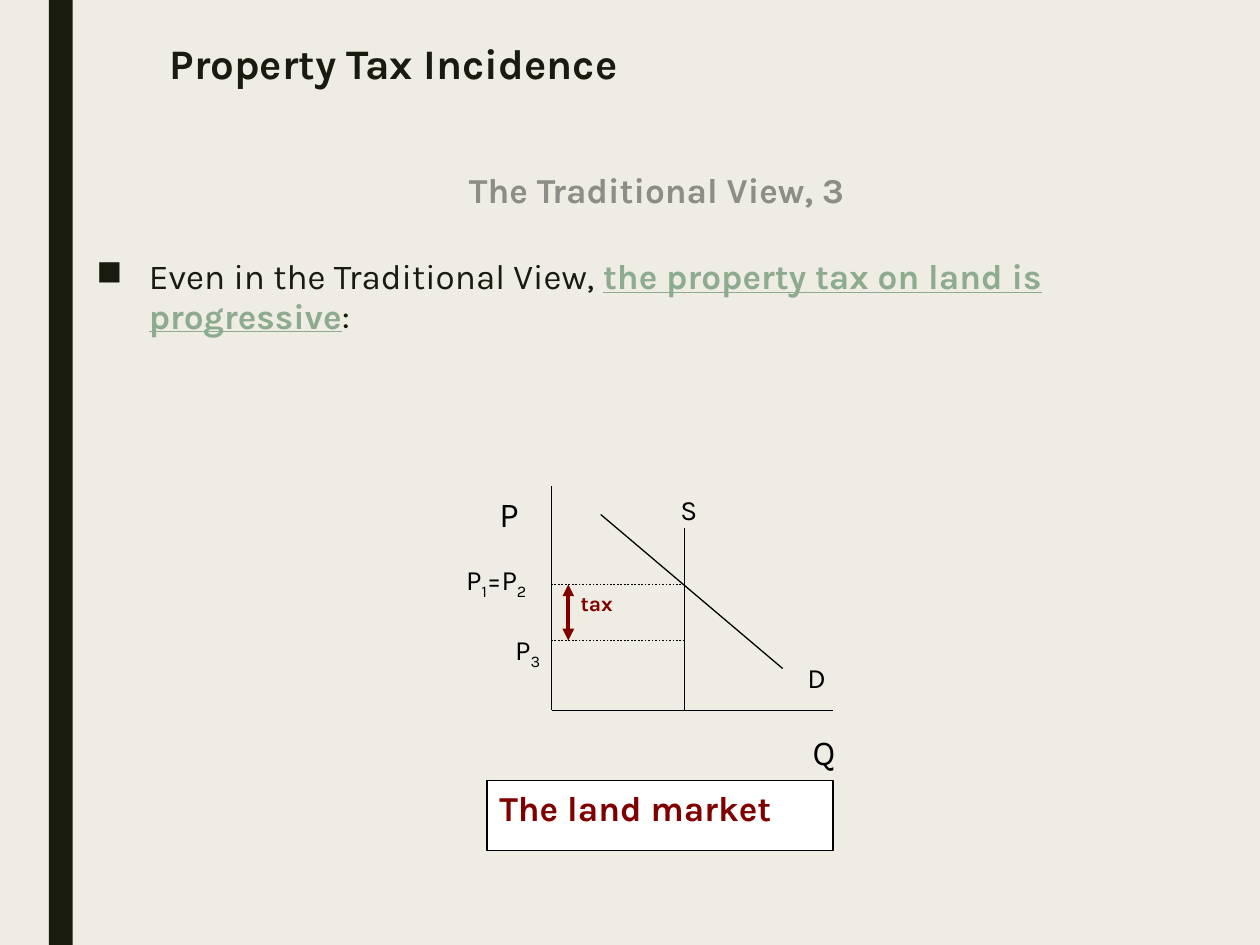
import pptx
import pptx.util
import pptx.dml.color
import pptx.enum.dml
import pptx.enum.shapes
import pptx.enum.text
import pptx.oxml
import pptx.oxml.ns

Pt = pptx.util.Pt
ALIGN = pptx.enum.text.PP_ALIGN
FONT = "Karla"
COLORS = {
    "paper": "EFEDE3", "ink": "191B0E", "muted": "8C8D86", "accent": "8DAB8E",
    "black": "000000", "tax": "800000", "white": "FFFFFF",
}


def rgb(name):
    return pptx.dml.color.RGBColor.from_string(COLORS[name])


def append_xml(parent, tag, **attrs):
    el = pptx.oxml.parse_xml(f"<a:{tag} {pptx.oxml.ns.nsdecls('a')}/>")
    for key, value in attrs.items():
        el.set(key, value)
    parent.append(el)


def add_run(p, text, size, color, bold=False, underline=False, subscript=False):
    r = p.add_run()
    r.text = text
    font = r.font
    font.name, font.size, font.bold = FONT, Pt(size), bold
    font.color.rgb = rgb(color)
    if underline:
        font.underline = True
    if subscript:
        r._r.get_or_add_rPr().set("baseline", "-25000")


def add_text_box(slide, left, top, width, height, wrap=True):
    sp = slide.shapes.add_textbox(Pt(left), Pt(top), Pt(width), Pt(height))
    sp.text_frame.word_wrap = wrap
    return sp.text_frame


def add_rect(slide, left, top, width, height, fill, line=None):
    sp = slide.shapes.add_shape(pptx.enum.shapes.MSO_SHAPE.RECTANGLE,
                                Pt(left), Pt(top), Pt(width), Pt(height))
    sp.shadow.inherit = False
    sp.fill.solid()
    sp.fill.fore_color.rgb = rgb(fill)
    if line:
        sp.line.color.rgb = rgb(line)
        sp.line.width = Pt(0.75)
    else:
        sp.line.fill.background()
    return sp


def add_line(slide, x1, y1, x2, y2, color="black", width=0.75, dotted=False, arrows=False):
    line = slide.shapes.add_connector(pptx.enum.shapes.MSO_CONNECTOR.STRAIGHT,
                                      Pt(x1), Pt(y1), Pt(x2), Pt(y2))
    line.line.color.rgb = rgb(color)
    line.line.width = Pt(width)
    if dotted:
        line.line.dash_style = pptx.enum.dml.MSO_LINE.ROUND_DOT
    if arrows:
        for end in ("headEnd", "tailEnd"):
            append_xml(line.line._ln, end, type="triangle")
    append_xml(line._element.spPr, "effectLst")


def add_title(slide, left, top, width, height):
    tf = add_text_box(slide, left, top, width, height)
    tf.margin_left = Pt(13)
    p = tf.paragraphs[0]
    p.line_spacing = 0.89
    add_run(p, "Property Tax Incidence", 24, "ink", bold=True)


def add_body(slide, left, top, width, height):
    tf = add_text_box(slide, left, top, width, height)
    heading, point = tf.paragraphs[0], tf.add_paragraph()
    for p in (heading, point):
        p.line_spacing = 0.94
        p.space_after = Pt(2)

    heading.alignment = ALIGN.CENTER
    heading._p.get_or_add_pPr().set("marL", str(Pt(6.5)))
    add_run(heading, "The Traditional View, 3", 20, "muted", bold=True)

    point.space_before = Pt(25)
    pPr = point._p.get_or_add_pPr()
    pPr.set("marL", str(Pt(30)))
    pPr.set("indent", str(-Pt(30)))
    append_xml(pPr, "buChar", char="■")
    add_run(point, "Even in the Traditional View, ", 20, "ink")
    add_run(point, "the property tax on land is progressive", 20, "accent",
            bold=True, underline=True)
    add_run(point, ":", 20, "ink")


def add_land_market(slide, left, top, width):
    """Supply and demand diagram with its caption, on an 8 pt grid."""
    axis_x, base_y, supply_x = left + 56, top + 128, left + 132
    price_y, net_price_y = top + 56, top + 88
    tax_x = left + 65.5

    add_line(slide, axis_x, top, axis_x, base_y)
    add_line(slide, axis_x, base_y, left + width, base_y)
    add_line(slide, supply_x, top + 24, supply_x, base_y)
    add_line(slide, left + 84, top + 16, left + 188, top + 104)
    for y in (price_y, net_price_y):
        add_line(slide, supply_x, y, axis_x, y, width=1, dotted=True)
    add_line(slide, tax_x, price_y, tax_x, net_price_y, "tax", 2.25, arrows=True)

    # Digits in a label are subscripts
    labels = [
        ("Q", 198, 136, 28, 20), ("P", 19, 0, 28, 20), ("S", 122.5, 0, 47, 16),
        ("D", 187, 96, 47, 16), ("P3", 28, 80, 47, 16), ("P1=P2", 0, 40, 94, 16),
    ]
    for text, x, y, w, size in labels:
        inset = 8 if text == "D" else 0
        tf = add_text_box(slide, left + x + inset, top + y, w - inset, size * 1.5)
        for char in text:
            add_run(tf.paragraphs[0], char, size, "black", subscript=char.isdigit())
    tf = add_text_box(slide, tax_x, price_y, 38, 24, wrap=False)
    add_run(tf.paragraphs[0], "tax", 12, "tax", bold=True)

    tf = add_rect(slide, left + 19, top + 168, width - 19, 40, "white", "black").text_frame
    tf.vertical_anchor = pptx.enum.text.MSO_ANCHOR.TOP
    p = tf.paragraphs[0]
    p.alignment = ALIGN.LEFT
    add_run(p, "The land market", 20, "tax", bold=True)


def main():
    prs = pptx.Presentation()
    prs.slide_width, prs.slide_height = Pt(720), Pt(540)
    slide = prs.slides.add_slide(prs.slide_layouts[6])
    slide.background.fill.solid()
    slide.background.fill.fore_color.rgb = rgb("paper")

    add_rect(slide, 28, 0, 13.5, 540, "ink")
    add_title(slide, 84, 21.5, 590, 38)
    add_body(slide, 48, 94.5, 648, 388)
    add_land_market(slide, 259.25, 278, 216.75)
    prs.save("out.pptx")


if __name__ == "__main__":
    main()
